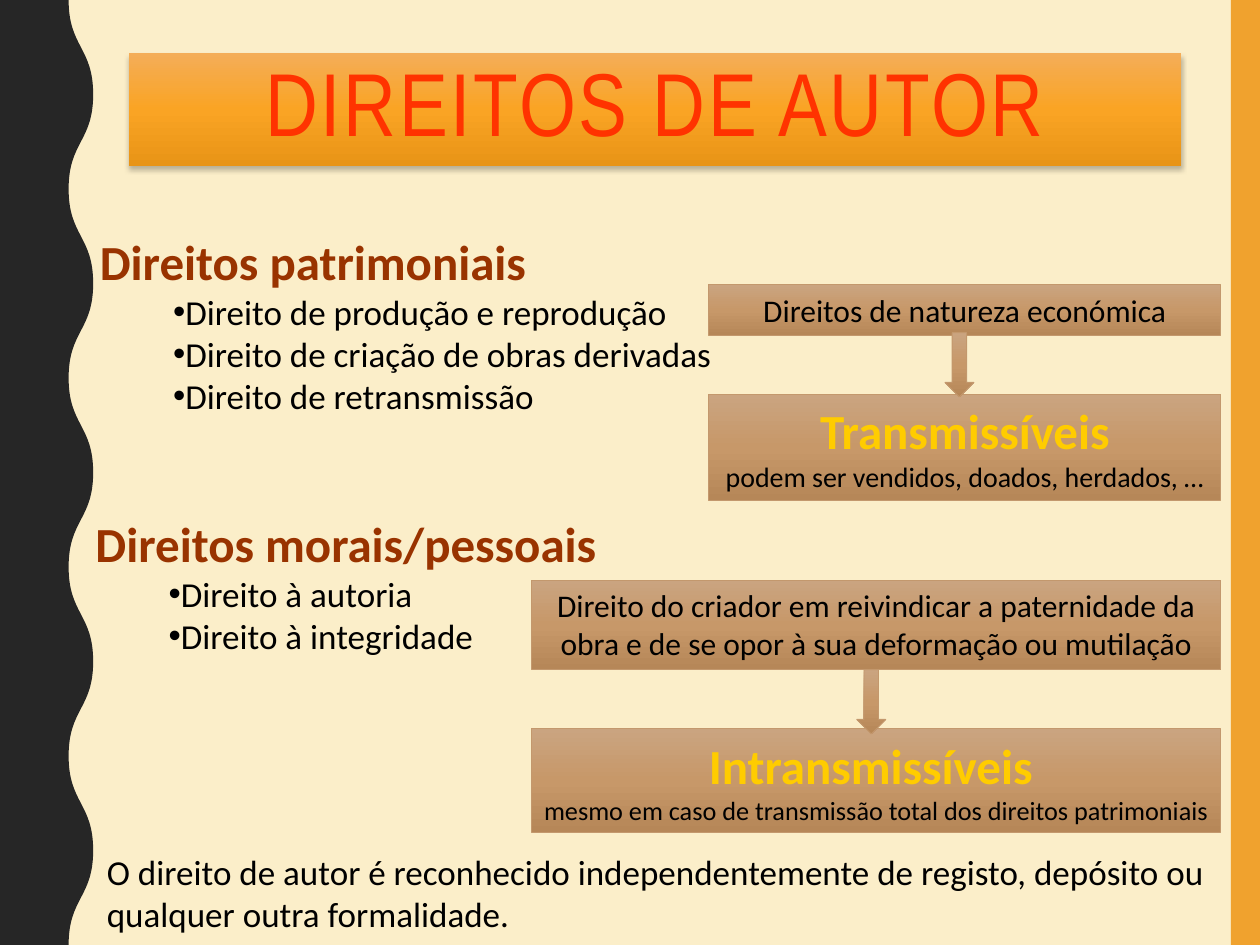
import pptx
import pptx.util
import pptx.dml.color
import pptx.enum.shapes
import pptx.enum.text
import pptx.oxml
import pptx.oxml.ns

KIND = pptx.enum.shapes.MSO_SHAPE
ALIGN = pptx.enum.text.PP_ALIGN
FIT = pptx.enum.text.MSO_AUTO_SIZE
ANCHOR = pptx.enum.text.MSO_ANCHOR
NS = pptx.oxml.ns.nsdecls("a")

COLS, ROWS = 100, 75
THEME = {
    "paper": "FBEEC9", "wave": "262626", "band": "F0A22E",
    "edge": "C3986D",
    "gold": ("F4AD58", "FAA424", "E89416"),
    "tan": ("CAA480", "C79869", "B68758"),
    "font": "Calibri", "narrow": "Arial Narrow", "dot": "Arial",
    "title": (51, "FF3300", False),
    "head": (28, "993300", True),
    "item": (20, "000000", False),
    "claim": (18, "000000", False),
    "key": (28, "FFCC00", True),
    "note": (16, "000000", False),
    "small": (15, "000000", False),
}

TITLE = ("DIREITOS DE AUTOR", (10.25, 4.2, 83.5, 9))
LISTS = [
    ((5.95, 17.9, 57, 15.8), "Direitos patrimoniais",
     ["Direito de produção e reprodução",
      "Direito de criação de obras derivadas",
      "Direito de retransmissão"]),
    ((5.6, 40.25, 52, 15.5), "Direitos morais/pessoais",
     ["Direito à autoria", "Direito à integridade"]),
]
BOXES = [
    ((42.2, 46.05, 54.7, 7.1),
     [("claim", "Direito do criador em reivindicar a paternidade da obra "
       "e de se opor à sua deformação ou mutilação", ALIGN.CENTER)]),
    ((42.2, 57.85, 54.7, 8.2),
     [("key", "Intransmissíveis ", ALIGN.CENTER),
      ("small", "mesmo em caso de transmissão total dos direitos patrimoniais",
       ALIGN.JUSTIFY)]),
    ((56.25, 22.6, 40.65, 4),
     [("claim", "Direitos de natureza económica", ALIGN.CENTER)]),
    ((56.25, 31.3, 40.65, 8.4),
     [("key", "Transmissíveis", ALIGN.CENTER),
      ("note", "podem ser vendidos, doados, herdados, …", ALIGN.CENTER)]),
]
ARROWS = [(75, 26.4, 2.3, 5.1), (68, 53.15, 2.3, 5.1)]
CLOSE = ("O direito de autor é reconhecido independentemente de registo, "
         "depósito ou qualquer outra formalidade.", (7.5, 67, 90.6, 7.7))

deck = pptx.Presentation()
deck.slide_width = pptx.util.Inches(10)
deck.slide_height = pptx.util.Inches(7.5)
slide = deck.slides.add_slide(deck.slide_layouts[6])


def color(code):
    return pptx.dml.color.RGBColor.from_string(code)


def place(area):
    x, y, w, h = area
    across, down = deck.slide_width / COLS, deck.slide_height / ROWS
    return [round(n) for n in (x * across, y * down, w * across, h * down)]


def paint(shape, fill):
    shape.shadow.inherit = False
    shape.line.fill.background()
    shape.fill.solid()
    shape.fill.fore_color.rgb = color(fill)


def shade(shape, tones):
    shape.shadow.inherit = False
    shape.fill.gradient()
    shape.fill.gradient_angle = 270
    stops = shape._element.spPr.find(".//" + pptx.oxml.ns.qn("a:gsLst"))
    for stop in list(stops):
        stops.remove(stop)
    for step, tone in enumerate(tones):
        stops.append(pptx.oxml.parse_xml(
            f'<a:gs {NS} pos="{step * 50000}"><a:srgbClr val="{tone}"/></a:gs>'))


def block(kind, area):
    shape = slide.shapes.add_shape(kind, *place(area))
    shade(shape, THEME["tan"])
    shape.line.color.rgb = color(THEME["edge"])
    shape.line.width = pptx.util.Pt(0.5)
    return shape


def style(font, role, face=THEME["font"]):
    size, tint, bold = THEME[role]
    font.name = face
    font.size = pptx.util.Pt(size)
    font.bold = bold
    font.color.rgb = color(tint)


def write(shape, rows):
    frame = shape.text_frame
    frame.word_wrap = True
    frame.auto_size = FIT.SHAPE_TO_FIT_TEXT
    frame.vertical_anchor = ANCHOR.TOP
    for n, (role, text, align) in enumerate(rows):
        para = frame.paragraphs[0] if n == 0 else frame.add_paragraph()
        para.text = text
        para.alignment = align
        style(para.font, role)
    return frame.paragraphs


def indent(para, left, first, mark=None):
    props = para._p.get_or_add_pPr()
    props.set("marL", str(pptx.util.Inches(left)))
    props.set("indent", str(pptx.util.Inches(first)))
    if mark:
        props.insert(0, pptx.oxml.parse_xml(
            f'<a:buFont {NS} typeface="{THEME["dot"]}"/>'))
        props.insert(1, pptx.oxml.parse_xml(f'<a:buChar {NS} char="{mark}"/>'))


def wave(crests=5):
    sides = (5.45, 7.4)
    half = ROWS / crests / 2
    points = [(sides[0], 0)]
    for n in range(crests * 2):
        here, there = sides[n % 2], sides[1 - n % 2]
        points += [(here, (n + 0.5) * half), (there, (n + 0.5) * half),
                   (there, (n + 1) * half)]
    points += [(0, ROWS), (0, 0)]
    spots = [place((x, y, 0, 0))[:2] for x, y in points]
    edge = slide.shapes.build_freeform(*spots[0])
    edge.add_line_segments(spots[1:], close=True)
    shape = edge.convert_to_shape()
    paint(shape, THEME["wave"])
    lines = list(shape._element.iter(pptx.oxml.ns.qn("a:lnTo")))
    for n in range(0, crests * 6, 3):
        curve = pptx.oxml.parse_xml(f"<a:cubicBezTo {NS}/>")
        lines[n].addprevious(curve)
        for line in lines[n:n + 3]:
            curve.append(line[0])
            line.getparent().remove(line)


slide.background.fill.solid()
slide.background.fill.fore_color.rgb = color(THEME["paper"])
band = slide.shapes.add_shape(KIND.RECTANGLE, *place((97.7, 0, 2.3, ROWS)))
paint(band, THEME["band"])
wave()

text, area = TITLE
title = slide.shapes.add_shape(KIND.RECTANGLE, *place(area))
shade(title, THEME["gold"])
title.line.fill.background()
glow = title._element.spPr.find(pptx.oxml.ns.qn("a:effectLst"))
glow.append(pptx.oxml.parse_xml(
    f'<a:outerShdw {NS} blurRad="38100" dist="25400" dir="5400000" rotWithShape="0">'
    '<a:srgbClr val="000000"><a:alpha val="25000"/></a:srgbClr></a:outerShdw>'))
title.text_frame.vertical_anchor = ANCHOR.MIDDLE
title.text_frame.margin_bottom = pptx.util.Inches(0.08)
para = title.text_frame.paragraphs[0]
para.alignment = ALIGN.CENTER
para.line_spacing = 0.9
run = para.add_run()
run.text = text
style(run.font, "title", THEME["narrow"])
run._r.get_or_add_rPr().set("spc", "150")

for area, rows in BOXES:
    write(block(KIND.RECTANGLE, area), rows)

for area, head, items in LISTS:
    shape = slide.shapes.add_textbox(*place(area))
    rows = [("head", head, None)] + [("item", item, None) for item in items]
    first, *rest = write(shape, rows)
    indent(first, 0.1, 0)
    for para in rest:
        indent(para, 0.49, 0.19, "•")

for area in ARROWS:
    block(KIND.DOWN_ARROW, area)

text, area = CLOSE
write(slide.shapes.add_textbox(*place(area)), [("item", text, None)])

deck.save("out.pptx")
